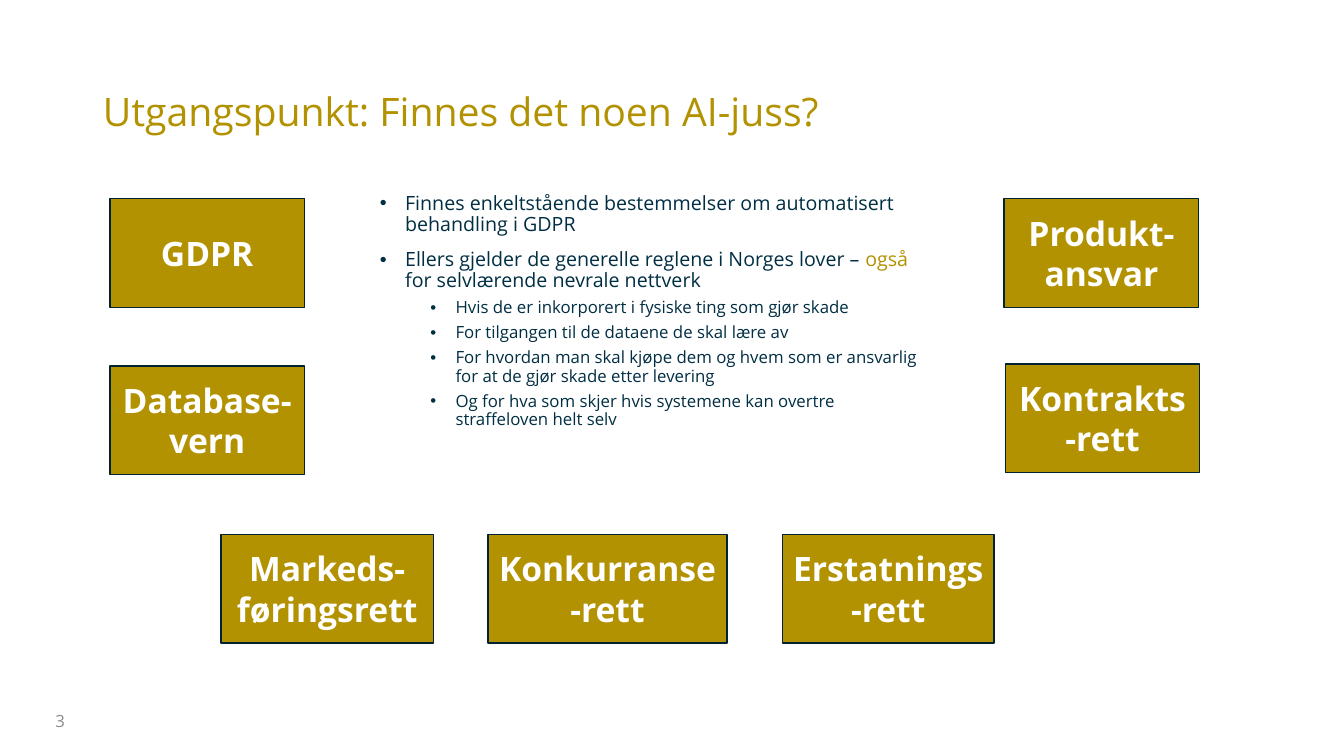
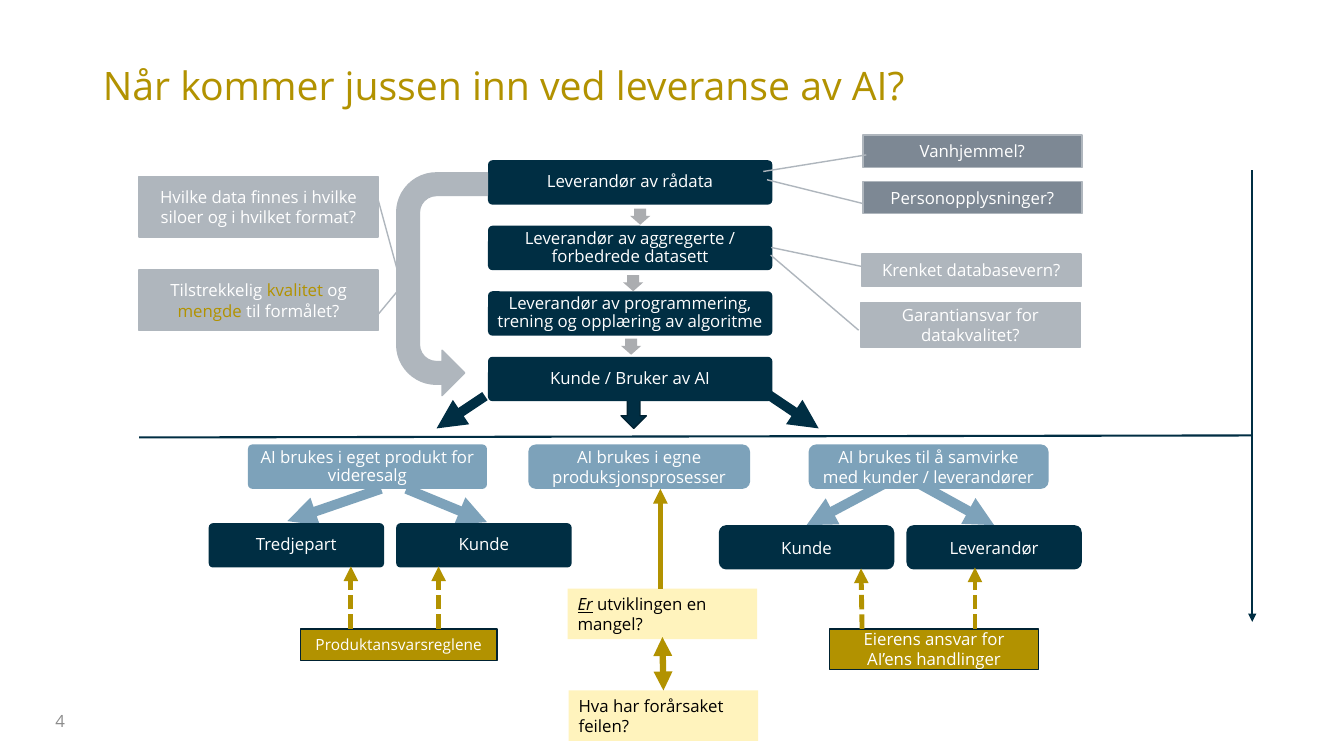
from lxml.etree import SubElement
from pptx import Presentation
from pptx.dml.color import RGBColor
from pptx.enum.dml import MSO_LINE
from pptx.enum.shapes import MSO_CONNECTOR, MSO_SHAPE as SHAPE
from pptx.enum.text import MSO_ANCHOR as ANCHOR, MSO_AUTO_SIZE, PP_ALIGN as ALIGN
from pptx.oxml.ns import qn
from pptx.util import Pt

PX = 9144
FONT = "Open Sans"
GOLD = RGBColor(0xB2, 0x92, 0x00)
NAVY = RGBColor(0x00, 0x2E, 0x43)
OUTLINE = RGBColor(0x00, 0x22, 0x32)
BLUE = RGBColor(0x7D, 0xA2, 0xBA)
LIGHT_GREY = RGBColor(0xAF, 0xB6, 0xBD)
DARK_GREY = RGBColor(0x7D, 0x88, 0x94)
ARROW_GREY = RGBColor(0xAB, 0xAD, 0xB0)
NUMBER_GREY = RGBColor(0x8C, 0x8C, 0x8C)
CREAM = RGBColor(0xFF, 0xF3, 0xBD)
WHITE = RGBColor(0xFF, 0xFF, 0xFF)
BLACK = RGBColor(0x00, 0x00, 0x00)


def px(*lengths):
    return [length * PX for length in lengths]


def add_runs(p, runs, size, color, bold=None):
    if isinstance(runs, str):
        runs = [(runs, {})]
    for text, style in runs:
        r = p.add_run()
        r.text = text
        r.font.name = FONT
        r.font.size = Pt(size)
        r.font.bold = bold
        r.font.color.rgb = style.get("color", color)
        r.font.italic = style.get("italic")
        r.font.underline = style.get("underline")


def add_title(s, text, height):
    sp = s.shapes.title
    sp.left, sp.top, sp.width, sp.height = px(92, 40, 1150, height)
    tf = sp.text_frame
    tf.auto_size = MSO_AUTO_SIZE.NONE
    tf.vertical_anchor = ANCHOR.MIDDLE
    p = tf.paragraphs[0]
    p.alignment = ALIGN.LEFT
    p.line_spacing = 0.9
    add_runs(p, text, 28, GOLD)


def add_text_frame(s, box, anchor):
    tf = s.shapes.add_textbox(*px(*box)).text_frame
    tf.word_wrap = True
    tf.vertical_anchor = anchor
    return tf


def new_slide(prs, title, title_height, number):
    s = prs.slides.add_slide(prs.slide_layouts[5])
    add_title(s, title, title_height)
    tf = add_text_frame(s, (45, 695, 300, 40), ANCHOR.MIDDLE)
    add_runs(tf.paragraphs[0], str(number), 12, NUMBER_GREY)
    return s


def add_bullets(s, box, items):
    tf = add_text_frame(s, box, ANCHOR.TOP)
    for i, (level, runs) in enumerate(items):
        p = tf.add_paragraph() if i else tf.paragraphs[0]
        p.level = level
        p.line_spacing = 0.9
        if i:
            p.space_before = Pt(5 if level else 10)
        pPr = p._p.get_or_add_pPr()
        pPr.set("marL", str((25 + 50 * level) * PX))
        pPr.set("indent", str(-25 * PX))
        SubElement(pPr, qn("a:buFont"), typeface="Arial")
        SubElement(pPr, qn("a:buChar"), char="•")
        add_runs(p, runs, 12 if level else 14, NAVY)


def add_block(s, kind, box, fill, line=None, adj=()):
    sp = s.shapes.add_shape(kind, *px(*box))
    sp.shadow.inherit = False
    sp.fill.solid()
    sp.fill.fore_color.rgb = fill
    if line is None:
        sp.line.fill.background()
    else:
        sp.line.color.rgb = line
        sp.line.width = Pt(1)
    for i, value in enumerate(adj):
        sp.adjustments[i] = value
    return sp


def write(sp, runs, size=12, color=WHITE, bold=None, align=ALIGN.CENTER,
          anchor=ANCHOR.MIDDLE, spacing=None):
    tf = sp.text_frame
    tf.word_wrap = True
    tf.vertical_anchor = anchor
    p = tf.paragraphs[0]
    p.alignment = align
    p.line_spacing = spacing
    add_runs(p, runs, size, color, bold)


def add_step(s, box, text, fill):
    sp = add_block(s, SHAPE.ROUNDED_RECTANGLE, box, fill, adj=(0.1,))
    sp.text_frame.margin_left = sp.text_frame.margin_right = 5 * PX
    write(sp, text, spacing=0.9)


def add_option(s, box, text, fill):
    write(add_block(s, SHAPE.ROUNDED_RECTANGLE, box, fill), text)


def add_gold_box(s, box, text, size, bold=None):
    write(add_block(s, SHAPE.RECTANGLE, box, GOLD, OUTLINE), text, size, bold=bold)


def add_callout(s, box, runs, fill, adj):
    write(add_block(s, SHAPE.LINE_CALLOUT_1, box, fill, LIGHT_GREY, adj), runs)


def add_note(s, box, runs):
    sp = add_block(s, SHAPE.RECTANGLE, box, CREAM)
    write(sp, runs, color=BLACK, align=ALIGN.LEFT, anchor=ANCHOR.TOP)


def add_line(s, points, color, width, ends=("tailEnd",), dash=None):
    c = s.shapes.add_connector(MSO_CONNECTOR.STRAIGHT, *px(*points))
    c.line.color.rgb = color
    c.line.width = Pt(width)
    if dash:
        c.line.dash_style = dash
    spPr = c._element.spPr
    for end in ends:
        SubElement(spPr.find(qn("a:ln")), qn("a:" + end), type="triangle")
    SubElement(spPr, qn("a:effectLst"))


def build_law_slide(prs):
    s = new_slide(prs, "Utgangspunkt: Finnes det noen AI-juss?", 145, 3)
    for x, y, width, text in (
        (109, 197, 193, "GDPR"),
        (996, 197, 193, "Produkt-ansvar"),
        (109, 363, 193, "Database-vern"),
        (997, 361, 193, "Kontrakts-rett"),
        (219, 530, 211, "Markeds-føringsrett"),
        (484, 530, 237, "Konkurranse-rett"),
        (776, 530, 210, "Erstatnings-rett"),
    ):
        add_gold_box(s, (x, y, width, 108), text, 24, True)
    add_bullets(s, (367, 187, 563, 283), (
        (0, "Finnes enkeltstående bestemmelser om automatisert behandling i GDPR"),
        (0, [("Ellers gjelder de generelle reglene i Norges lover – ", {}),
             ("også", {"color": GOLD}),
             (" for selvlærende nevrale nettverk", {})]),
        (1, "Hvis de er inkorporert i fysiske ting som gjør skade"),
        (1, "For tilgangen til de dataene de skal lære av"),
        (1, "For hvordan man skal kjøpe dem og hvem som er ansvarlig "
            "for at de gjør skade etter levering"),
        (1, "Og for hva som skjer hvis systemene kan overtre straffeloven helt selv"),
    ))


def add_supply_chain(s):
    for x, y in ((625, 207), (618, 273), (616, 336)):
        add_block(s, SHAPE.DOWN_ARROW, (x, y, 20, 16), ARROW_GREY, adj=(0.6, 0.55))
    add_block(s, SHAPE.DOWN_ARROW, (616, 396, 25, 29), NAVY, OUTLINE)
    for points in ((751, 384, 812, 425), (481, 393, 433, 425)):
        add_line(s, points, NAVY, 7)
    for i, text in enumerate((
        "Leverandør av rådata",
        "Leverandør av aggregerte / forbedrede datasett",
        "Leverandør av programmering, trening og opplæring av algoritme",
        "Kunde / Bruker av AI",
    )):
        add_step(s, (484, 159 + 65 * i, 282, 44), text, NAVY)
    bend = add_block(s, SHAPE.U_TURN_ARROW, (328, 237, 221, 90), LIGHT_GREY, LIGHT_GREY)
    bend.rotation = 270
    bend._element.spPr.find(qn("a:xfrm")).set("flipH", "1")


def add_uses(s):
    for points in ((908, 478, 986, 521), (879, 479, 800, 521),
                   (403, 485, 483, 518), (378, 485, 285, 517)):
        add_line(s, points, BLUE, 7)
    add_step(s, (246, 441, 237, 44), "AI brukes i eget produkt for videresalg", BLUE)
    add_step(s, (207, 519, 174, 44), "Tredjepart", NAVY)
    add_step(s, (393, 519, 174, 44), "Kunde", NAVY)
    add_option(s, (524, 441, 220, 44), "AI brukes i egne produksjonsprosesser", BLUE)
    add_option(s, (802, 441, 238, 44),
               "AI brukes til å samvirke med kunder / leverandører", BLUE)
    add_option(s, (713, 521, 174, 44), "Kunde", NAVY)
    add_option(s, (899, 521, 174, 44), "Leverandør", NAVY)


def add_questions(s):
    gold = {"color": GOLD}
    for box, runs, fill, adj in (
        ((138, 175, 237, 60), "Hvilke data finnes i hvilke siloer og i hvilket format?",
         LIGHT_GREY, (0.365, 0.999, 1.771, 1.096)),
        ((138, 268, 237, 60),
         [("Tilstrekkelig ", {}), ("kvalitet", gold), (" og ", {}),
          ("mengde", gold), (" til formålet?", {})],
         LIGHT_GREY, (0.74, 0.999, 0.279, 1.096)),
        ((856, 134, 217, 32), "Vanhjemmel?", DARK_GREY, (0.614, 0.015, 1.128, -0.456)),
        ((856, 180, 217, 32), "Personopplysninger?",
         DARK_GREY, (0.685, -0.001, -0.052, -0.439)),
        ((855, 252, 217, 32), "Krenket databasevern?",
         LIGHT_GREY, (0.401, 0.01, -0.205, -0.415)),
        ((854, 300, 217, 45), "Garantiansvar for datakvalitet?",
         LIGHT_GREY, (0.614, -0.011, -1.044, -0.413)),
    ):
        add_callout(s, box, runs, fill, adj)


def add_liability(s):
    add_gold_box(s, (298, 624, 195, 31), "Produktansvarsreglene", 11)
    add_gold_box(s, (823, 624, 207, 40), "Eierens ansvar for AI’ens handlinger", 12)
    for x, end_x, end_y in ((348, 348, 562), (435, 435, 562),
                            (855, 854, 564), (967, 967, 563)):
        add_line(s, (x, 624, end_x, end_y), GOLD, 3.5, dash=MSO_LINE.SQUARE_DOT)
    add_note(s, (563, 584, 188, 50),
             [("Er", {"italic": True, "underline": True}), (" utviklingen en mangel?", {})])
    add_note(s, (564, 685, 188, 50), "Hva har forårsaket feilen?")
    add_line(s, (657, 632, 658, 685), GOLD, 4.5, ("headEnd", "tailEnd"))
    add_line(s, (655, 584, 655, 485), GOLD, 3.5)


def build_delivery_slide(prs):
    s = new_slide(prs, "Når kommer jussen inn ved leveranse av AI?", 94, 4)
    add_line(s, (138, 434, 1242, 432), NAVY, 1.5, ())
    add_line(s, (1242, 169, 1242, 617), NAVY, 1.5)
    add_supply_chain(s)
    add_uses(s)
    add_questions(s)
    add_liability(s)


def main():
    prs = Presentation()
    prs.slide_width, prs.slide_height = px(1333, 750)
    build_law_slide(prs)
    build_delivery_slide(prs)
    prs.save("out.pptx")


if __name__ == "__main__":
    main()
